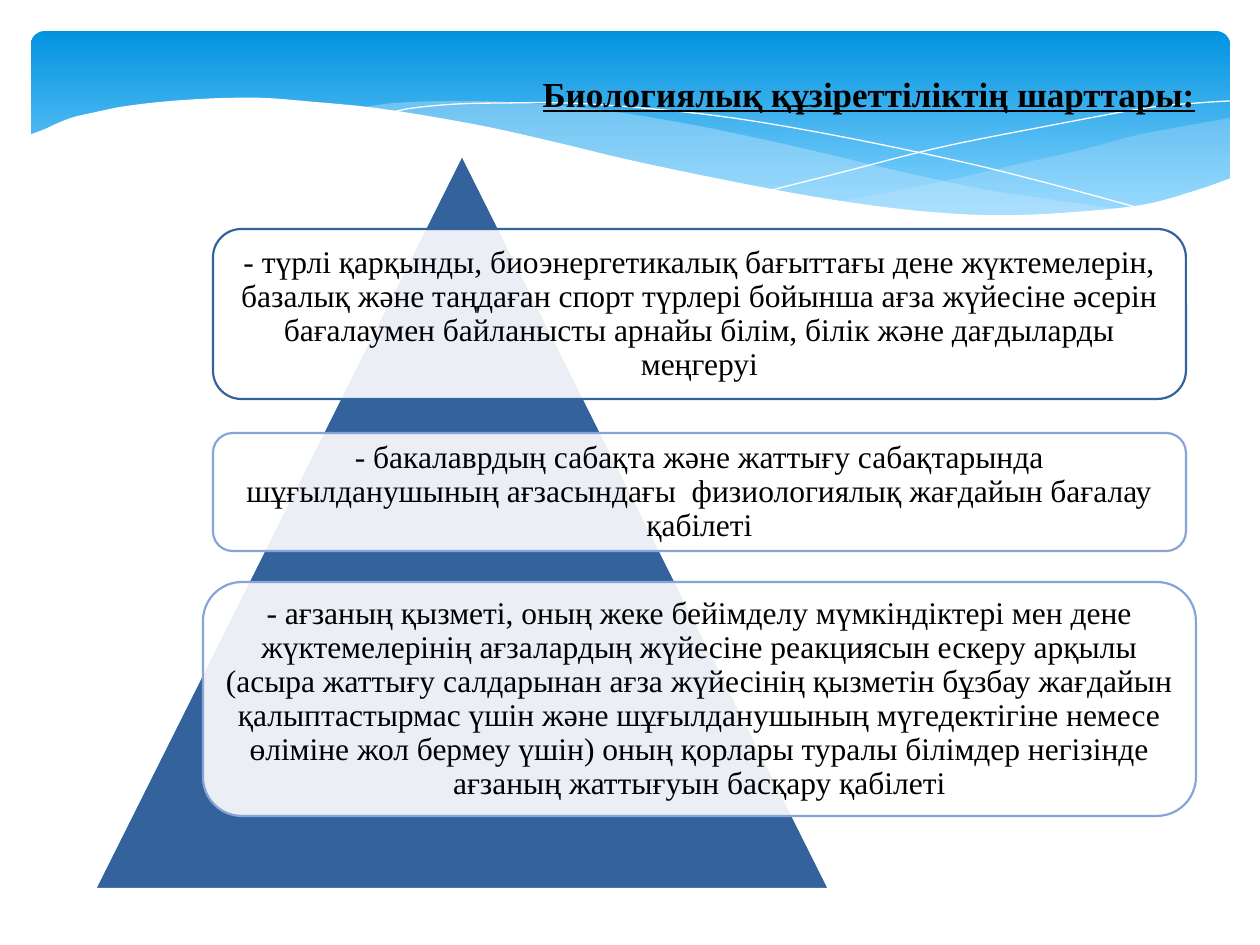
"""Build the slide on the conditions of biological competence."""
from dataclasses import dataclass
from typing import Optional

from lxml import etree
from pptx import Presentation
from pptx.dml.color import RGBColor
from pptx.enum.shapes import MSO_SHAPE
from pptx.enum.text import MSO_ANCHOR, MSO_AUTO_SIZE, PP_ALIGN
from pptx.oxml.ns import qn
from pptx.util import Emu, Pt

ROUNDED = MSO_SHAPE.ROUNDED_RECTANGLE
TRIANGLE = MSO_SHAPE.ISOSCELES_TRIANGLE
LEFT, CENTER = PP_ALIGN.LEFT, PP_ALIGN.CENTER
TOP, MIDDLE = MSO_ANCHOR.TOP, MSO_ANCHOR.MIDDLE
GROW = MSO_AUTO_SIZE.SHAPE_TO_FIT_TEXT

EMU_PER_PX = 914400 / 126
FONT = "Times New Roman"
CURVE_STEPS = 6
TITLE_ONLY = 5
COLORS = {
    "white": "FFFFFF",
    "black": "000000",
    "sky_top": "0293E0",
    "sky_bottom": "83D3FE",
    "wave": "C6E7FC",
    "pyramid": "33629C",
    "border": "87A4D7",
}

Points = list[tuple[float, float]]


@dataclass
class Wave:
    edges: list[Points]
    fill: Optional[str] = None
    opacity: int = 100


@dataclass
class Condition:
    left: int
    top: int
    width: int
    height: int
    border: str
    text: str


WAVES = [
    Wave([
        [(1230, 118), (1142, 134), (1085, 149), (1014, 165), (949, 180), (890, 192), (833, 202)],
        [(833, 202), (871, 207), (922, 212), (984, 217), (1052, 217), (1110, 210), (1169, 199),
         (1230, 178)],
    ], "wave", 29),
    Wave([
        [(360, 108), (394, 103), (455, 101), (529, 103), (616, 112), (699, 126), (793, 146),
         (890, 169), (977, 188), (1055, 200), (1125, 210)],
        [(1125, 210), (1080, 215), (1031, 218), (959, 215), (876, 208), (779, 193), (668, 170),
         (566, 146), (483, 127), (407, 113), (360, 108)],
    ], "wave", 40),
    Wave([[(389, 113), (413, 108), (457, 104), (505, 103), (567, 103), (643, 108), (733, 118),
           (838, 136), (958, 161), (1047, 183), (1143, 209)]]),
    Wave([[(772, 190), (847, 171), (942, 147), (1053, 125), (1146, 108), (1198, 103),
           (1230, 101)]]),
    Wave([
        [(1231, 178), (1197, 190), (1147, 204), (1087, 211), (1019, 215), (959, 214), (892, 208),
         (816, 197), (730, 181), (634, 161), (563, 144), (493, 128), (428, 116), (368, 107),
         (315, 102), (266, 98), (223, 98), (184, 100), (150, 103), (120, 107), (96, 112),
         (74, 117), (58, 123), (45, 129), (29, 135)],
        [(29, 135), (29, 282)],
        [(29, 282), (1231, 282)],
    ], "white"),
]

CONDITIONS = [
    Condition(213, 229, 973, 170, "pyramid",
              "- түрлі қарқынды, биоэнергетикалық бағыттағы дене жүктемелерін, базалық және "
              "таңдаған спорт түрлері бойынша ағза жүйесіне әсерін бағалаумен байланысты арнайы "
              "білім, білік және дағдыларды меңгеруі"),
    Condition(213, 433, 973, 118, "border",
              "- бакалаврдың сабақта және жаттығу сабақтарында шұғылданушының ағзасындағы  "
              "физиологиялық жағдайын бағалау қабілеті"),
    Condition(203, 582, 993, 234, "border",
              "- ағзаның қызметі, оның жеке бейімделу мүмкіндіктері мен дене жүктемелерінің "
              "ағзалардың жүйесіне реакциясын ескеру арқылы (асыра жаттығу салдарынан ағза "
              "жүйесінің қызметін бұзбау жағдайын қалыптастырмас үшін және шұғылданушының "
              "мүгедектігіне немесе өліміне жол бермеу үшін) оның қорлары туралы білімдер "
              "негізінде ағзаның жаттығуын басқару қабілеті"),
]


def px(length: float) -> Emu:
    return Emu(round(length * EMU_PER_PX))


def rgb(name: str) -> RGBColor:
    return RGBColor.from_string(COLORS[name])


def paint(shape, color: str, opacity: int = 100) -> None:
    shape.fill.solid()
    shape.fill.fore_color.rgb = rgb(color)
    if opacity < 100:
        tint = shape.fill._xPr.find(qn("a:solidFill"))[0]
        etree.SubElement(tint, qn("a:alpha"), val=str(opacity * 1000))


def outline(shape, color: str, width: float) -> None:
    shape.line.color.rgb = rgb(color)
    shape.line.width = Pt(width)


def add_preset(slide, preset, left: int, top: int, width: int, height: int):
    shape = slide.shapes.add_shape(preset, px(left), px(top), px(width), px(height))
    shape.shadow.inherit = False
    return shape


def smooth(knots: Points) -> Points:
    """Return points on a Catmull-Rom curve through the knots."""
    if len(knots) == 2:
        return knots
    padded = [knots[0], *knots, knots[-1]]
    curve = [knots[0]]
    for a, b, c, d in zip(padded, padded[1:], padded[2:], padded[3:]):
        for step in range(1, CURVE_STEPS + 1):
            t = step / CURVE_STEPS
            x, y = (
                (2 * q + (r - p) * t + (2 * p - 5 * q + 4 * r - s) * t**2
                 + (3 * q - p - 3 * r + s) * t**3) / 2
                for p, q, r, s in zip(a, b, c, d)
            )
            curve.append((x, y))
    return curve


def add_wave(slide, wave: Wave) -> None:
    route = [(px(x), px(y)) for edge in wave.edges for x, y in smooth(edge)]
    builder = slide.shapes.build_freeform(*route[0])
    builder.add_line_segments(route[1:], close=wave.fill is not None)
    shape = builder.convert_to_shape()
    shape.shadow.inherit = False
    if wave.fill:
        paint(shape, wave.fill, wave.opacity)
        shape.line.fill.background()
    else:
        shape.fill.background()
        outline(shape, "white", 0)


def add_sky(slide) -> None:
    sky = add_preset(slide, ROUNDED, 31, 31, 1199, 197)
    sky.adjustments[0] = 0.07
    sky.line.fill.background()
    sky.fill.gradient()
    sky.fill.gradient_angle = 270
    stops = zip(sky.fill.gradient_stops, ("sky_top", "sky_bottom"), (0, 0.9))
    for stop, color, position in stops:
        stop.color.rgb = rgb(color)
        stop.position = position


def write(frame, text: str, size: int, align) -> None:
    frame.text = text
    paragraph = frame.paragraphs[0]
    paragraph.alignment = align
    font = paragraph.runs[0].font
    font.name, font.size = FONT, Pt(size)
    font.color.rgb = rgb("black")


def add_condition(slide, condition: Condition) -> None:
    box = add_preset(slide, ROUNDED, condition.left, condition.top,
                     condition.width, condition.height)
    paint(box, "white", 90)
    outline(box, condition.border, 1.25)
    frame = box.text_frame
    frame.word_wrap = True
    frame.vertical_anchor = MIDDLE
    frame.margin_left = frame.margin_right = frame.margin_top = frame.margin_bottom = px(9)
    write(frame, condition.text, 18, CENTER)
    frame.paragraphs[0].line_spacing = 0.9


def place_title(slide) -> None:
    title = slide.shapes.title
    title.left, title.top, title.width, title.height = px(530), px(66), px(683), px(55)
    frame = title.text_frame
    write(frame, "Биологиялық құзіреттіліктің шарттары:", 20, LEFT)
    frame.word_wrap = False
    frame.auto_size = GROW
    frame.vertical_anchor = TOP
    font = frame.paragraphs[0].runs[0].font
    font.bold = font.underline = True
    slide.shapes._spTree.append(title._element)


def main() -> None:
    deck = Presentation()
    deck.slide_width, deck.slide_height = px(1260), px(945)
    slide = deck.slides.add_slide(deck.slide_layouts[TITLE_ONLY])
    add_sky(slide)
    for wave in WAVES:
        add_wave(slide, wave)
    pyramid = add_preset(slide, TRIANGLE, 95, 155, 734, 734)
    paint(pyramid, "pyramid")
    outline(pyramid, "white", 1.25)
    for condition in CONDITIONS:
        add_condition(slide, condition)
    place_title(slide)
    deck.save("out.pptx")


if __name__ == "__main__":
    main()
